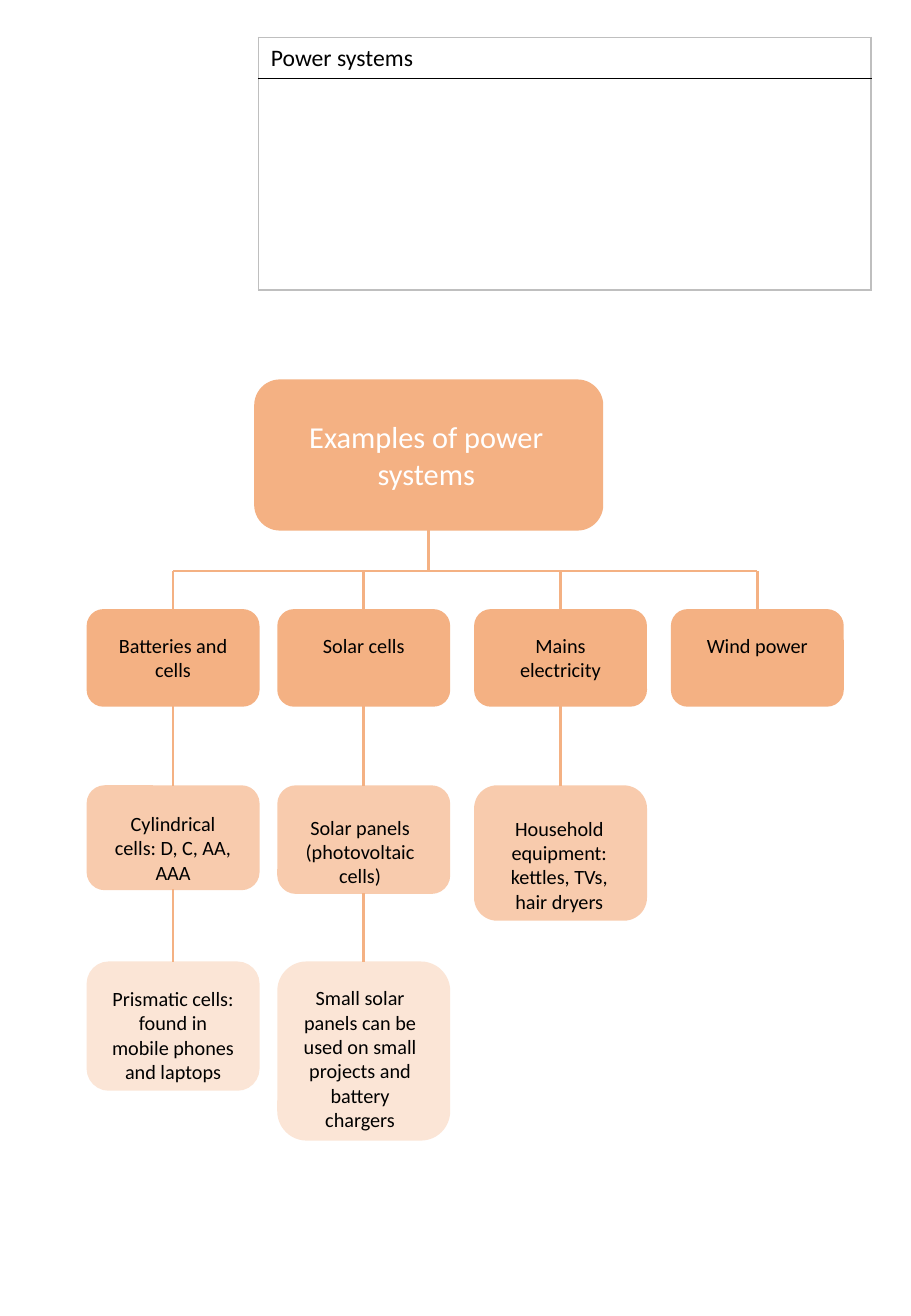
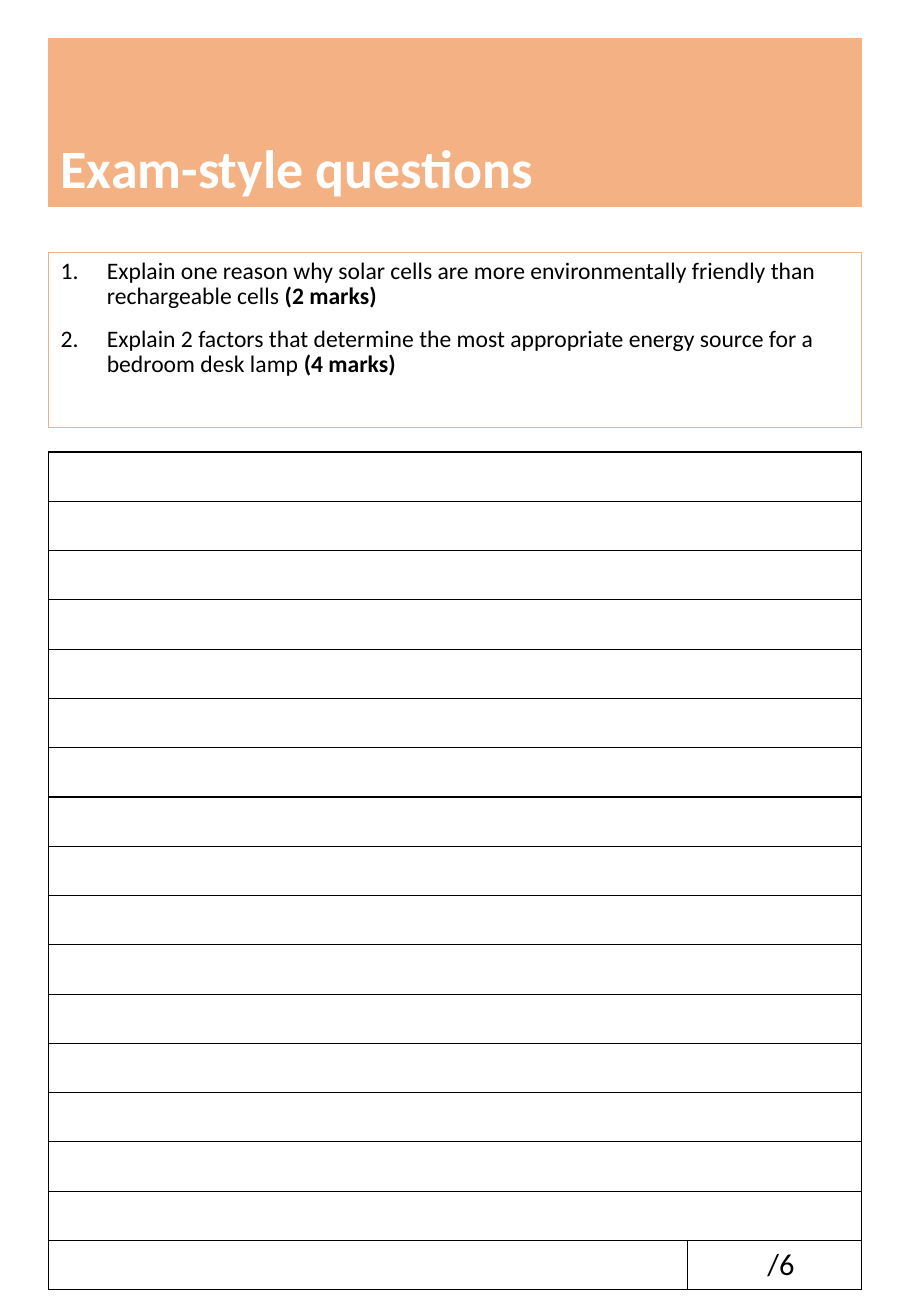
import pptx
import pptx.util
import pptx.dml.color
import pptx.enum.shapes
import pptx.enum.text
import pptx.oxml
import pptx.oxml.ns
from lxml import etree

ANCHOR = pptx.enum.text.MSO_ANCHOR
ALIGN = pptx.enum.text.PP_ALIGN
COLORS = {"root": "F4B183", "detail": "F8CBAD", "extra": "FBE5D6",
          "text": "000000", "white": "FFFFFF", "frame": "BFBFBF"}
FONT = {"name": "Calibri", "bold": False}
WIDTH, HEIGHT = 7.5, 10.83

# Main column of the question page, in grid units
PAGE_LEFT, PAGE_WIDTH = 5.33, 89.2


def u(n):
    """One grid unit is a hundredth of the slide width."""
    return pptx.util.Inches(n * WIDTH / 100)


def rgb(key):
    return pptx.dml.color.RGBColor.from_string(COLORS[key])


def set_all(obj, values):
    for name, value in values.items():
        setattr(obj, name, value)


def add_run(p, text, size, color="text", **extra):
    r = p.add_run()
    r.text = text
    set_all(r.font, {**FONT, "size": pptx.util.Pt(size), **extra})
    r.font.color.rgb = rgb(color)


def outline(shape, fill, line, width):
    if fill:
        shape.fill.solid()
        shape.fill.fore_color.rgb = rgb(fill)
    else:
        shape.fill.background()
    shape.line.color.rgb = rgb(line)
    shape.line.width = pptx.util.Pt(width)


def place(shape, box):
    set_all(shape, dict(zip(("left", "top", "width", "height"), map(u, box))))


def border_cell(cell, width, colors):
    """Clear the fill and draw the left, right, top and bottom borders."""
    cell.fill.background()
    tcPr = cell._tc.get_or_add_tcPr()
    for i, (side, color) in enumerate(zip("LRTB", colors)):
        ln = pptx.oxml.parse_xml(
            f'<a:ln{side} {pptx.oxml.ns.nsdecls("a")} w="{pptx.util.Pt(width)}">'
            f'<a:solidFill><a:srgbClr val="{COLORS[color]}"/></a:solidFill></a:ln{side}>')
        tcPr.insert(i, ln)


def add_grid(s, x, y, cols, rows):
    frame = s.shapes.add_table(len(rows), len(cols), u(x), u(y), u(sum(cols)), u(sum(rows)))
    table = frame.table
    set_all(table, {"first_row": False, "horz_banding": False})
    for col, w in zip(table.columns, cols):
        col.width = u(w)
    for row, h in zip(table.rows, rows):
        row.height = u(h)
    return table


# Slide 1: note table and tree
def note_table(s, x, y, width):
    table = add_grid(s, x, y, [width], [4.4, 23.2])
    add_run(table.cell(0, 0).text_frame.paragraphs[0], "Power systems", 14)
    border_cell(table.cell(0, 0), 1, ["frame", "frame", "frame", "text"])
    border_cell(table.cell(1, 0), 1, ["frame", "frame", "text", "frame"])


def add_node(s, box, text, fill, anchor, size=12, color="text", side=0.18, top=0.0, nudge=0.0):
    shape = s.shapes.add_shape(pptx.enum.shapes.MSO_SHAPE.ROUNDED_RECTANGLE, *map(u, box))
    shape.shadow.inherit = False
    outline(shape, fill, fill, 1)
    # The rounded corners already hold the text in by a share of the short side
    side -= min(box[2:]) * WIDTH / 100 * 0.05
    tf = shape.text_frame
    set_all(tf, {"word_wrap": True, "vertical_anchor": anchor,
                 "margin_left": pptx.util.Inches(side - nudge),
                 "margin_right": pptx.util.Inches(side + nudge),
                 "margin_top": pptx.util.Inches(top), "margin_bottom": 0})
    p = tf.paragraphs[0]
    p.alignment = ALIGN.CENTER
    add_run(p, text, size, color)
    return shape


def add_line(s, start, end, above=None, below=None):
    line = s.shapes.add_connector(pptx.enum.shapes.MSO_CONNECTOR.STRAIGHT,
                                  *map(u, start + end))
    if above is not None:
        line.begin_connect(above, 2)
    if below is not None:
        line.end_connect(below, 0)
    line.line.color.rgb = rgb("root")
    line.line.width = pptx.util.Pt(1.5)
    etree.SubElement(line._element.spPr, pptx.oxml.ns.qn("a:effectLst"))


BRANCHES = [  # column, topic, text nudge, then (text, height) of each box below
    (0, "Batteries and cells", 0,
     [("Cylindrical cells: D, C, AA, AAA", 11.33),
      ("Prismatic cells: found in mobile phones and laptops", 14)]),
    (20.93, "Solar cells", 0.03,
     [("Solar panels (photovoltaic cells)", 11.73),
      ("Small solar panels can be used on small projects and battery chargers", 19.47)]),
    (42.53, "Mains electricity", 0.01,
     [("Household equipment: kettles, TVs, hair dryers", 14.67)]),
    (64.13, "Wind power", 0, []),
]


def power_tree(s, x, y):
    node_w, topic_h, first_row, row_pitch = 18.8, 10.53, 25.2, 19.33
    bus_y = y + 20.93
    root_box = (x + 18.4, y, 38.13, 16.4)
    root = add_node(s, root_box, "Examples of power systems", "root", ANCHOR.MIDDLE,
                    18, "white", side=0.31, nudge=0.02)
    middle = root_box[0] + root_box[2] / 2
    add_line(s, (middle, y), (middle, bus_y), above=root)

    centers = [x + branch[0] + node_w / 2 for branch in BRANCHES]
    add_line(s, (centers[0], bus_y), (centers[-1], bus_y))
    for center, (col, topic, nudge, details) in zip(centers, BRANCHES):
        top = y + first_row
        node = add_node(s, (x + col, top, node_w, topic_h), topic, "root", ANCHOR.TOP, top=0.15)
        add_line(s, (center, bus_y), (center, top), below=node)
        for (text, height), fill in zip(details, ("detail", "extra")):
            top += row_pitch
            child = add_node(s, (x + col, top, node_w, height), text, fill,
                             ANCHOR.BOTTOM, nudge=nudge)
            add_line(s, (center, top), (center, top), node, child)
            node = child


# Slide 2: heading, questions and answer lines
def heading(s, box):
    title = s.shapes.title
    place(title, box)
    outline(title, "root", "root", 0.75)
    tf = title.text_frame
    set_all(tf, {"vertical_anchor": ANCHOR.BOTTOM, "word_wrap": True,
                 "auto_size": pptx.enum.text.MSO_AUTO_SIZE.NONE})
    p = tf.paragraphs[0]
    set_all(p, {"alignment": ALIGN.LEFT, "line_spacing": 0.9})
    add_run(p, "Exam-style questions", 32, "white", bold=True)


QUESTIONS = [
    ("Explain one reason why solar cells are more environmentally friendly than "
     "rechargeable cells ", "(2 marks)"),
    ("Explain 2 factors that determine the most appropriate energy source for a "
     "bedroom desk lamp ", "(4 marks)"),
]


def question_list(s, box):
    body = s.placeholders[1]
    place(body, box)
    outline(body, None, "root", 0.75)
    tf = body.text_frame
    set_all(tf, {"word_wrap": True, "vertical_anchor": ANCHOR.TOP,
                 "auto_size": pptx.enum.text.MSO_AUTO_SIZE.NONE})
    for i, (question, marks) in enumerate(QUESTIONS):
        p = tf.add_paragraph() if i else tf.paragraphs[0]
        pPr = p._p.get_or_add_pPr()
        indent = pptx.util.Inches(0.38)
        pPr.set("marL", str(indent))
        pPr.set("indent", str(-indent))
        etree.SubElement(pPr, pptx.oxml.ns.qn("a:buFont"), typeface="+mj-lt")
        etree.SubElement(pPr, pptx.oxml.ns.qn("a:buAutoNum"), type="arabicPeriod")
        set_all(p, {"alignment": ALIGN.LEFT, "line_spacing": 0.9,
                    "space_before": pptx.util.Pt(10 if i else 0)})
        add_run(p, question, 14)
        add_run(p, marks, 14, bold=True)


def answer_lines(s, x, y, width, count=17):
    score_w = 19.1
    table = add_grid(s, x, y, [width - score_w, score_w], [5.33] * count)
    for row in range(count):
        for col in range(2):
            border_cell(table.cell(row, col), 0.75, ["text"] * 4)
        if row < count - 1:
            table.cell(row, 0).merge(table.cell(row, 1))
    score = table.cell(count - 1, 1)
    score.margin_left = pptx.util.Inches(0.66)
    add_run(score.text_frame.paragraphs[0], "/6", 18)


def main():
    prs = pptx.Presentation()
    set_all(prs, {"slide_width": pptx.util.Inches(WIDTH),
                  "slide_height": pptx.util.Inches(HEIGHT)})

    s = prs.slides.add_slide(prs.slide_layouts[6])
    note_table(s, 28.4, 4.13, 67.2)
    power_tree(s, 9.6, 41.73)

    s = prs.slides.add_slide(prs.slide_layouts[1])
    heading(s, (PAGE_LEFT, 4.27, PAGE_WIDTH, 18.4))
    question_list(s, (PAGE_LEFT, 27.73, PAGE_WIDTH, 19.2))
    answer_lines(s, PAGE_LEFT, 49.6, PAGE_WIDTH)

    prs.save("out.pptx")


if __name__ == "__main__":
    main()
